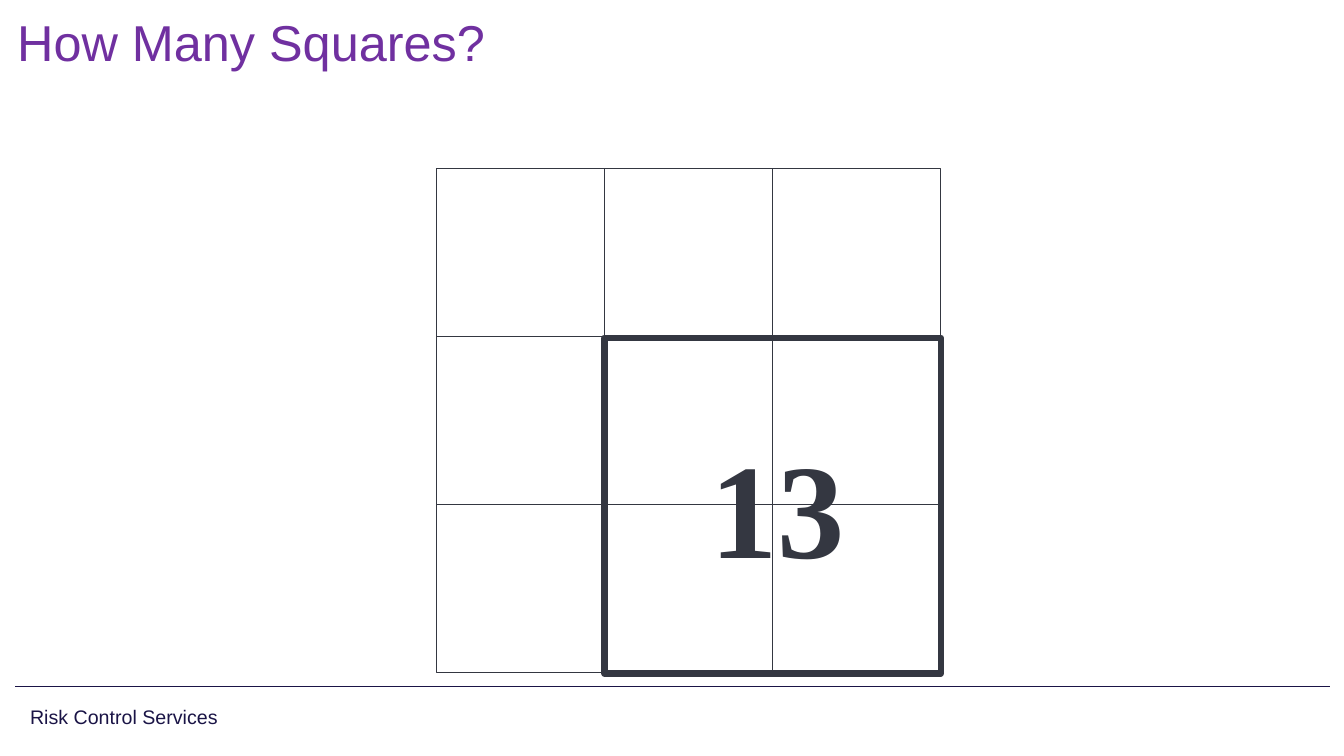
from dataclasses import dataclass
from itertools import product

from lxml.etree import SubElement
from pptx import Presentation
from pptx.dml.color import RGBColor
from pptx.enum.shapes import MSO_CONNECTOR, MSO_SHAPE
from pptx.enum.text import MSO_ANCHOR, MSO_AUTO_SIZE, PP_ALIGN
from pptx.oxml.ns import qn
from pptx.util import Inches, Pt


@dataclass(frozen=True)
class Theme:
    purple: RGBColor = RGBColor(0x70, 0x30, 0xA0)
    navy: RGBColor = RGBColor(0x1A, 0x14, 0x46)
    charcoal: RGBColor = RGBColor(0x34, 0x37, 0x41)
    sans: str = "Arial"
    serif: str = "Times New Roman"
    title_size: int = 36
    footer_size: int = 14
    answer_size: int = 96


THEME = Theme()


def write_text(shape, text, font_name, size, color, bold=False,
               align=PP_ALIGN.LEFT, anchor=MSO_ANCHOR.MIDDLE, line_spacing=0.9):
    frame = shape.text_frame
    frame.word_wrap = True
    frame.auto_size = MSO_AUTO_SIZE.NONE
    frame.vertical_anchor = anchor
    paragraph = frame.paragraphs[0]
    paragraph.alignment = align
    paragraph.line_spacing = line_spacing
    paragraph.space_before = Pt(0)
    run = paragraph.add_run()
    run.text = text
    run.font.name = font_name
    run.font.size = Pt(size)
    run.font.bold = bold
    run.font.color.rgb = color


def add_title(slide, text):
    title = slide.shapes.title
    title.left, title.top = Inches(0.07), Inches(-0.77)
    title.width, title.height = Inches(11.34), Inches(2.43)
    write_text(title, text, THEME.sans, THEME.title_size, THEME.purple)


def add_text(slide, box, text, *style, **options):
    shape = slide.shapes.add_textbox(*map(Inches, box))
    write_text(shape, text, *style, **options)


def add_square(slide, left, top, side, line_width):
    square = slide.shapes.add_shape(
        MSO_SHAPE.RECTANGLE, Inches(left), Inches(top), Inches(side), Inches(side))
    square.shadow.inherit = False
    square.fill.background()
    square.line.color.rgb = THEME.charcoal
    square.line.width = Pt(line_width)


def add_rule(slide, left, right, top):
    rule = slide.shapes.add_connector(
        MSO_CONNECTOR.STRAIGHT, Inches(left), Inches(top), Inches(right), Inches(top))
    rule.line.color.rgb = THEME.navy
    rule.line.width = Pt(1)
    SubElement(rule._element.spPr, qn("a:effectLst"))


def main():
    presentation = Presentation()
    presentation.slide_width = Inches(13.33)
    presentation.slide_height = Inches(7.5)
    slide = presentation.slides.add_slide(presentation.slide_layouts[5])

    # Footer and title
    add_text(slide, (0.2, 6.91, 4.37, 0.42), "Risk Control Services",
             THEME.sans, THEME.footer_size, THEME.navy)
    add_rule(slide, 0.15, 13.19, 6.81)
    add_title(slide, "How Many Squares?")

    # Three by three grid
    grid_left, grid_top, cell = 4.33, 1.67, 5 / 3
    for row, column in product(range(3), repeat=2):
        add_square(slide, grid_left + column * cell, grid_top + row * cell, cell, 0.75)

    # Highlighted two by two square with the running count
    add_square(slide, grid_left + cell, 3.35, 2 * cell, 4.5)
    add_text(slide, (6.92, 4.16, 1.58, 1.7), "13",
             THEME.serif, THEME.answer_size, THEME.charcoal, bold=True,
             align=PP_ALIGN.CENTER, anchor=MSO_ANCHOR.TOP, line_spacing=1.0)

    presentation.save("out.pptx")


if __name__ == "__main__":
    main()
